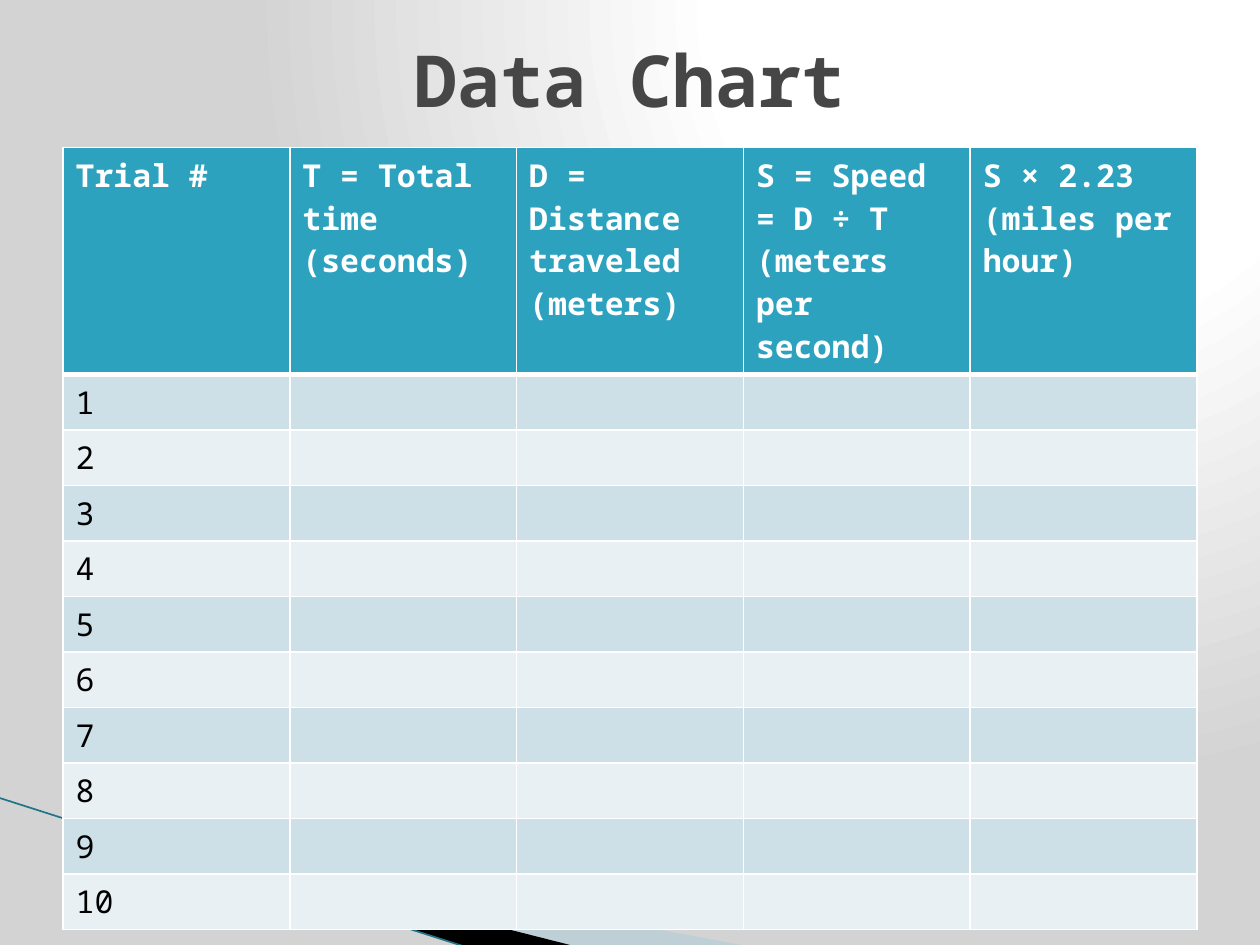
from dataclasses import dataclass

from lxml import etree
from pptx import Presentation
from pptx import util as u
from pptx.dml import color
from pptx.enum import shapes, text
from pptx.oxml import ns


@dataclass(frozen=True)
class Theme:
    font: str = "Noto Sans Mono"
    big: float = 41
    body: float = 18
    white: str = "FFFFFF"
    gray: str = "D3D3D3"
    dark: str = "464646"
    black: str = "000000"
    head: str = "2DA2BF"
    bands: tuple = ("CDE0E8", "E8F0F4")
    pale: str = "A0CBDC"
    teal: str = "1F7488"


T = Theme()
HEADS = ["Trial #", "T = Total time (seconds)", "D = Distance traveled (meters)",
         "S = Speed = D ÷ T (meters per second)", "S × 2.23\n(miles per hour)"]
TRIALS = 10


def rgb(code):
    return color.RGBColor.from_string(code)


def sub(node, tag, **attrs):
    return etree.SubElement(node, ns.qn(tag), {k: str(v) for k, v in attrs.items()})


def style(frame, size, tint, bold):
    for para in frame.paragraphs:
        for run in para.runs:
            font = run.font
            font.name, font.size, font.bold = T.font, u.Pt(size), bold
            font.color.rgb = rgb(tint)


def backdrop(slide):
    slide.background.fill.gradient()
    grad = next(slide.element.iter(ns.qn("a:gradFill")))
    for node in list(grad):
        grad.remove(node)
    stops = sub(grad, "a:gsLst")
    for pos, tint in ((0, T.white), (40, T.white), (100, T.gray)):
        sub(sub(stops, "a:gs", pos=pos * 1000), "a:srgbClr", val=tint)
    ring = sub(grad, "a:path", path="circle")
    sub(ring, "a:fillToRect", l=65000, t=0, r=0, b=98000)


def wave(slide, box):
    left, top, wide, high = box

    def spot(x, y):
        return u.Cm(left + x), u.Cm(top + y)

    blades = [
        (T.pale, 40, [(1.43, 0.46), (15.14, 3), (11.61, 3), (1.43, 0.43)]),
        (T.black, 100, [(1.38, 0.4), (11.64, 3), (9.48, 3.02), (1.4, 0.43)]),
    ]
    for tint, alpha, points in blades:
        pen = slide.shapes.build_freeform(*spot(*points[0]), scale=1.0)
        pen.add_line_segments([spot(*p) for p in points[1:]], close=True)
        blade = pen.convert_to_shape()
        blade.shadow.inherit = False
        blade.fill.solid()
        blade.fill.fore_color.rgb = rgb(tint)
        blade.line.fill.background()
        if alpha < 100:
            tone = next(blade.element.spPr.iter(ns.qn("a:srgbClr")))
            sub(tone, "a:alpha", val=alpha * 1000)
    edge = slide.shapes.add_connector(
        shapes.MSO_CONNECTOR.STRAIGHT, *spot(0, 0), *spot(wide, high))
    edge.line.color.rgb = rgb(T.teal)
    edge.line.width = u.Pt(0.95)
    sub(edge.element.spPr, "a:effectLst")


def heading(slide, box):
    title = slide.shapes.title
    title.left, title.top, title.width, title.height = map(u.Cm, box)
    frame = title.text_frame
    frame.text = "Data Chart"
    frame.vertical_anchor = text.MSO_ANCHOR.MIDDLE
    frame.paragraphs[0].alignment = text.PP_ALIGN.CENTER
    style(frame, T.big, T.dark, True)


def border(cell, row):
    props = cell._tc.get_or_add_tcPr()
    thick = {"T": 3 if row == 1 else 1, "B": 3 if row == 0 else 1}
    for side in "LRTB":
        line = sub(props, f"a:ln{side}", w=u.Pt(thick.get(side, 1)))
        sub(sub(line, "a:solidFill"), "a:srgbClr", val=T.white)


def grid(slide, box):
    rows = [HEADS] + [[str(n)] + [""] * (len(HEADS) - 1)
                      for n in range(1, TRIALS + 1)]
    table = slide.shapes.add_table(len(rows), len(HEADS), *map(u.Cm, box)).table
    low = 1.02
    for r, words in enumerate(rows):
        top = r == 0
        table.rows[r].height = u.Cm(box[3] - low * TRIALS if top else low)
        for c, word in enumerate(words):
            cell = table.cell(r, c)
            border(cell, r)
            cell.fill.solid()
            cell.fill.fore_color.rgb = rgb(T.head if top else T.bands[(r - 1) % 2])
            cell.text_frame.text = word
            style(cell.text_frame, T.body, T.white if top else T.black, top)


def main():
    deck = Presentation()
    deck.slide_width, deck.slide_height = u.Cm(25.4), u.Cm(19.05)
    slide = deck.slides.add_slide(deck.slide_layouts[5])
    backdrop(slide)
    wave(slide, (-0.03, 16.08, 9.45, 3.02))
    grid(slide, (1.27, 2.97, 22.86, 13.43))
    heading(slide, (1.27, 0, 22.86, 3.18))
    deck.save("out.pptx")


if __name__ == "__main__":
    main()
